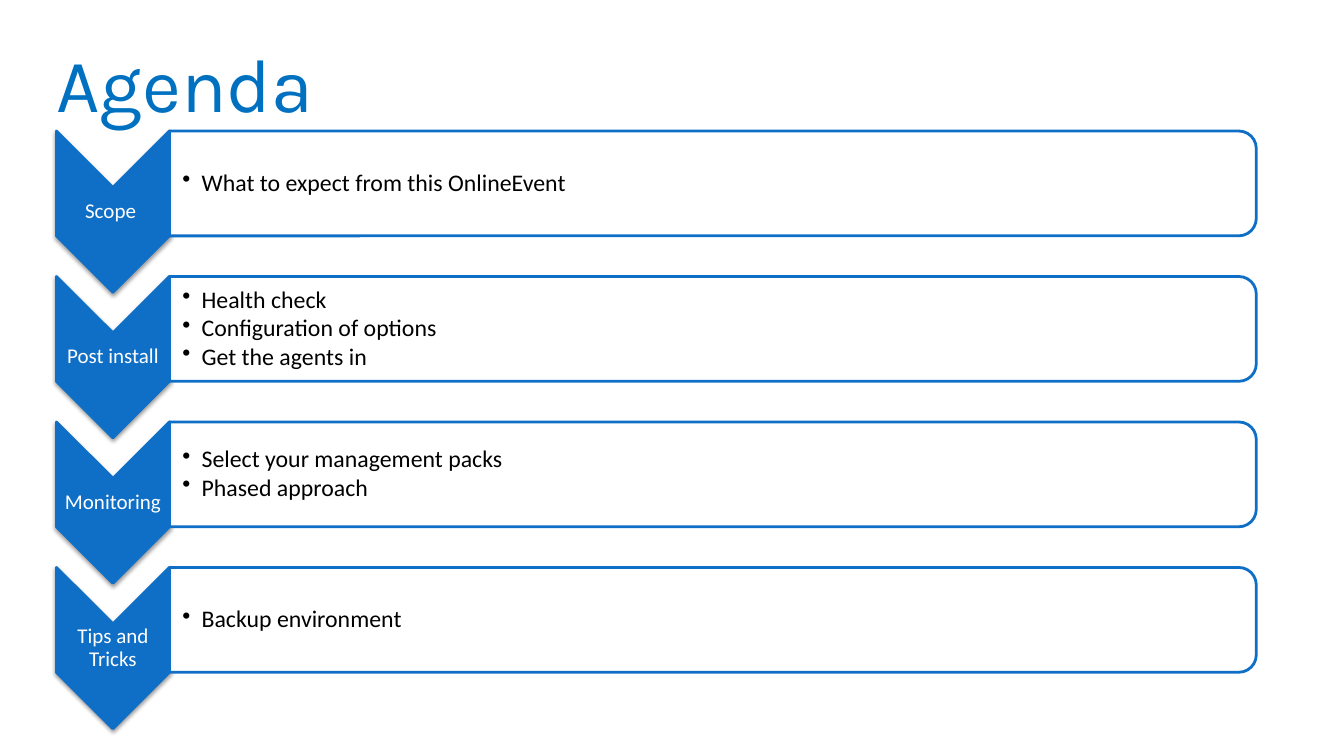
from lxml import etree
from pptx import Presentation
from pptx.dml.color import RGBColor
from pptx.enum.shapes import MSO_SHAPE
from pptx.enum.text import MSO_ANCHOR, PP_ALIGN
from pptx.oxml.ns import qn
from pptx.util import Inches, Pt

TITLE = "Agenda"
STEPS = [
    ("Scope ", ["What to expect from this OnlineEvent"]),
    ("Post install", ["Health check", "Configuration of options", "Get the agents in"]),
    ("Monitoring", ["Select your management packs", "Phased approach"]),
    ("Tips and Tricks", ["Backup environment"]),
]
COLORS = {"title": "0070C0", "blue": "0F6FC6", "white": "FFFFFF", "black": "000000"}

LEFT, FIRST_TOP, LAST_TOP = 0.56, 1.3, 5.63
PITCH = (LAST_TOP - FIRST_TOP) / (len(STEPS) - 1)
CHEVRON_WIDTH, CHEVRON_HEIGHT = 1.12, 1.6
BAR_LEFT = LEFT + CHEVRON_WIDTH
BAR_WIDTH, BAR_HEIGHT = 10.78, 1.04


def color(name):
    return RGBColor.from_string(COLORS[name])


def add_turned_shape(slide, kind, left, top, width, height, fill):
    middle_x, middle_y = left + width / 2, top + height / 2
    shape = slide.shapes.add_shape(
        kind, Inches(middle_x - height / 2), Inches(middle_y - width / 2),
        Inches(height), Inches(width))
    shape.rotation = 90
    shape.shadow.inherit = False
    shape.fill.solid()
    shape.fill.fore_color.rgb = color(fill)
    shape.line.color.rgb = color("blue")
    shape.line.width = Pt(2)
    return shape


def add_alpha(color_element, percent):
    etree.SubElement(color_element, qn("a:alpha"), val=str(percent * 1000))


def add_shadow(shape):
    effects = shape._element.spPr.find(qn("a:effectLst"))
    shadow = etree.SubElement(
        effects, qn("a:outerShdw"), blurRad=str(Pt(3.1)), dist=str(Pt(1.6)),
        dir="5400000", rotWithShape="0")
    add_alpha(etree.SubElement(shadow, qn("a:srgbClr"), val=COLORS["black"]), 38)


def add_bullet(paragraph):
    properties = paragraph._p.get_or_add_pPr()
    properties.set("marL", str(Inches(0.19)))
    properties.set("indent", str(Inches(-0.19)))
    etree.SubElement(properties, qn("a:buChar"), char="•")


def add_text(slide, lines, left, top, width, height, size, font_color, bulleted):
    box = slide.shapes.add_textbox(Inches(left), Inches(top), Inches(width), Inches(height))
    frame = box.text_frame
    frame.word_wrap = True
    frame.vertical_anchor = MSO_ANCHOR.MIDDLE
    frame.margin_top = frame.margin_right = frame.margin_bottom = Inches(0.01)
    frame.margin_left = Inches(0.13 if bulleted else 0.01)
    frame.text = "\n".join(lines)
    for paragraph in frame.paragraphs:
        paragraph.line_spacing = 0.9
        if bulleted:
            paragraph.space_after = Pt(2)
            add_bullet(paragraph)
        else:
            paragraph.alignment = PP_ALIGN.CENTER
        for run in paragraph.runs:
            run.font.name = "Calibri"
            run.font.size = Pt(size)
            run.font.color.rgb = color(font_color)


def add_title(slide):
    title = slide.shapes.title
    title.left, title.top = Inches(0.46), Inches(0.28)
    title.width, title.height = Inches(12), Inches(1.25)
    title.text_frame.text = TITLE
    title.text_frame.vertical_anchor = MSO_ANCHOR.MIDDLE
    paragraph = title.text_frame.paragraphs[0]
    paragraph.alignment = PP_ALIGN.LEFT
    paragraph.line_spacing = 0.8
    font = paragraph.runs[0].font
    font.name = "Karla"
    font.size = Pt(54)
    font.color.rgb = color("title")


def add_step(slide, top, label, points):
    chevron = add_turned_shape(
        slide, MSO_SHAPE.CHEVRON, LEFT, top, CHEVRON_WIDTH, CHEVRON_HEIGHT, "blue")
    add_shadow(chevron)
    add_text(slide, [label], LEFT, top + 0.56, CHEVRON_WIDTH, 0.48, 15, "white", False)
    bar = add_turned_shape(
        slide, MSO_SHAPE.ROUND_2_SAME_RECTANGLE, BAR_LEFT, top, BAR_WIDTH, BAR_HEIGHT, "white")
    add_alpha(bar._element.spPr.find(qn("a:solidFill"))[0], 90)
    add_text(slide, points, BAR_LEFT, top + 0.05, 10.73, 0.94, 17, "black", True)


def main():
    presentation = Presentation()
    presentation.slide_width, presentation.slide_height = Inches(13.33), Inches(7.5)
    slide = presentation.slides.add_slide(presentation.slide_layouts[5])
    add_title(slide)
    for row, (label, points) in enumerate(STEPS):
        add_step(slide, FIRST_TOP + row * PITCH, label, points)
    presentation.save("out.pptx")


if __name__ == "__main__":
    main()
